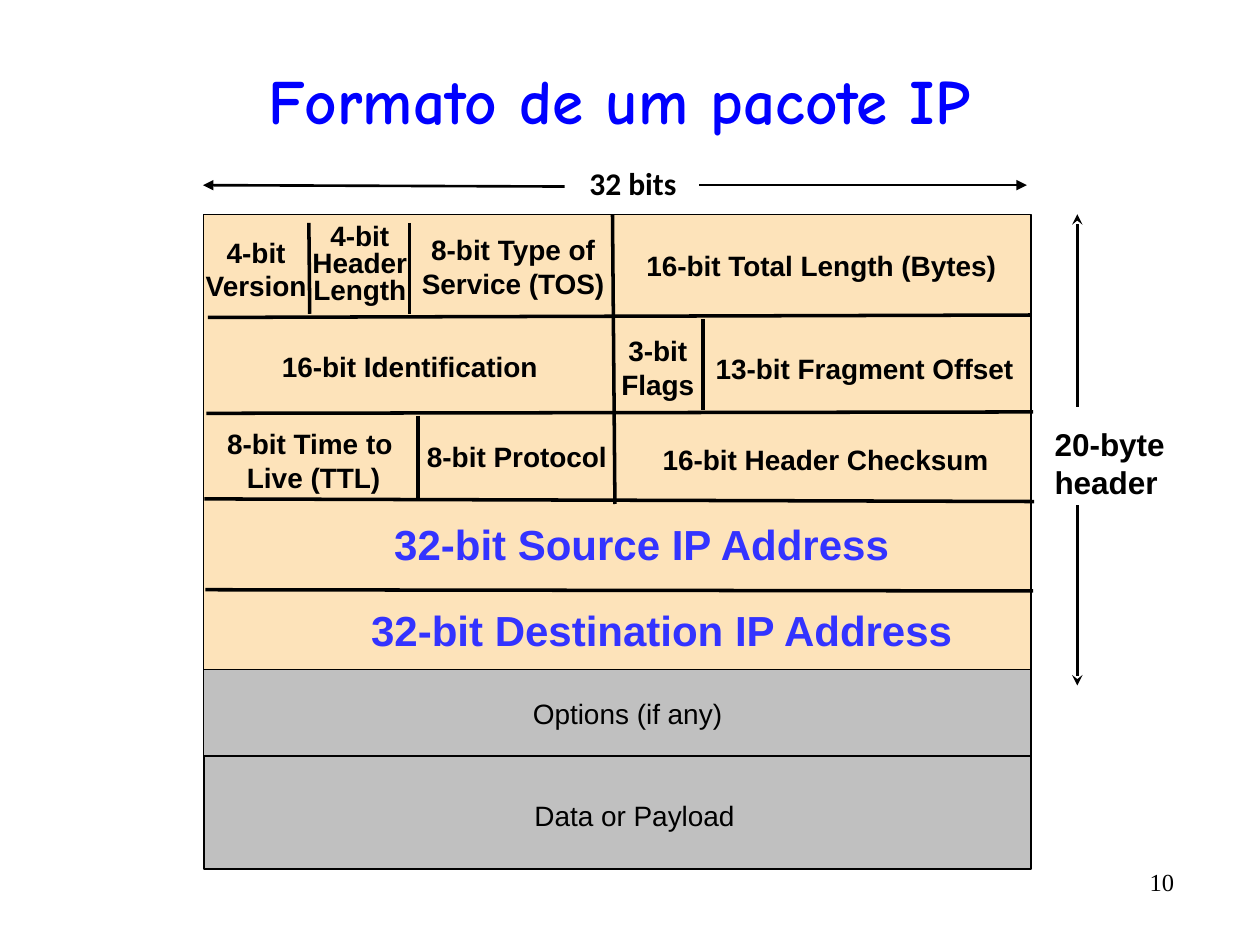
from typing import NamedTuple

from lxml import etree
from pptx import Presentation
from pptx.dml.color import RGBColor
from pptx.enum.shapes import MSO_CONNECTOR, MSO_SHAPE
from pptx.enum.text import MSO_ANCHOR, MSO_AUTO_SIZE, PP_ALIGN
from pptx.oxml.ns import qn
from pptx.util import Pt

STRAIGHT = MSO_CONNECTOR.STRAIGHT
RECTANGLE = MSO_SHAPE.RECTANGLE
MIDDLE = MSO_ANCHOR.MIDDLE
GROW = MSO_AUTO_SIZE.SHAPE_TO_FIT_TEXT
LEFT, CENTER, RIGHT = PP_ALIGN.LEFT, PP_ALIGN.CENTER, PP_ALIGN.RIGHT

COLORS = {
    "title": "0000FF",
    "text": "000000",
    "address": "3333FF",
    "header": "FDE3BA",
    "payload": "C0C0C0",
}


class Band(NamedTuple):
    left: float
    top: float
    width: float
    height: float
    color: str


class Label(NamedTuple):
    text: str
    left: float
    top: float
    width: float
    height: float
    align: PP_ALIGN = LEFT
    size: float = 16
    color: str = "text"
    bold: bool = True
    font: str = "Arial"
    spacing: float = 1.0
    wrap: bool = False


class Line(NamedTuple):
    x1: float
    y1: float
    x2: float
    y2: float
    width: float = 2
    head: str = ""
    tail: str = ""


BANDS = [
    Band(116.3, 122.6, 472.8, 260.2, "header"),
    Band(116.3, 382.6, 472.8, 49.4, "payload"),
    Band(116.6, 432, 472.4, 64.8, "payload"),
]

LINES = [
    # Row dividers
    Line(118.8, 181.4, 589.7, 180),
    Line(118, 236.2, 590.4, 235.4),
    Line(116.8, 285.1, 591, 286.6),
    Line(117.4, 337, 590.4, 337.7),
    # Field dividers
    Line(350, 122.4, 351.4, 288),
    Line(234, 127.4, 234, 179.3),
    Line(176.5, 127.4, 177, 179.3),
    Line(401.8, 182.2, 401.8, 234),
    Line(239, 237.6, 239, 284.4),
    # Header height
    Line(615.6, 122.4, 615.6, 232.6, head="stealth"),
    Line(615.6, 288.7, 615.6, 391.7, tail="stealth"),
    # Packet width
    Line(399.6, 105.8, 586.8, 105.8, 1.5, tail="triangle"),
    Line(322.6, 106.6, 116, 105.8, 1.5, tail="triangle"),
]

LABELS = [
    # First word
    Label("4-bit\nVersion", 110, 131, 72.7, 45.4, CENTER),
    Label("4-bit\nHeader\nLength", 171.4, 125.3, 68.4, 53.3, CENTER, spacing=0.8),
    Label("8-bit Type of\nService (TOS)", 233.5, 129.6, 119.5, 45.4, CENTER),
    Label("16-bit Total Length (Bytes)", 362.2, 138.7, 216.7, 26.6),
    # Second word
    Label("16-bit Identification", 154, 196, 161.3, 26),
    Label("3-bit\nFlags", 347.8, 187.2, 56.2, 45.4, CENTER),
    Label("13-bit Fragment Offset", 401.8, 197.3, 185, 26),
    # Third word
    Label("8-bit Time to \nLive (TTL)", 122, 240.2, 114.5, 45.4, CENTER),
    Label("8-bit Protocol", 236.9, 247.7, 118.8, 26.6),
    Label("16-bit Header Checksum", 371.5, 249.1, 200.9, 26),
    # Addresses
    Label("32-bit Source IP Address", 218.2, 292.5, 300.2, 36, size=24, color="address"),
    Label("32-bit Destination IP Address", 205, 342, 350, 36, size=24, color="address"),
    # After the header
    Label("Options (if any)", 297.4, 394.6, 123, 26, bold=False),
    Label("Data or Payload", 298.3, 452.9, 130.3, 26.6, bold=False),
    # Dimensions, with room for the longest word
    Label("20-byte\nheader", 595.5, 239.3, 82, 50.4, size=18),
    Label("32 bits", 329.3, 90, 64.8, 28.8, CENTER, 18, font="Calibri"),
    # Slide number
    Label("10", 606, 491.8, 72, 30.2, RIGHT, 14, bold=False,
          font="Times New Roman", wrap=True),
]


def rgb(name: str) -> RGBColor:
    return RGBColor.from_string(COLORS[name])


def format_text(frame, label: Label) -> None:
    frame.text = label.text
    for paragraph in frame.paragraphs:
        paragraph.alignment = label.align
        if label.spacing != 1:
            paragraph.line_spacing = label.spacing
        for run in paragraph.runs:
            run.font.name = label.font
            run.font.size = Pt(label.size)
            run.font.bold = label.bold
            run.font.color.rgb = rgb(label.color)


def place(label: Label):
    return Pt(label.left), Pt(label.top), Pt(label.width), Pt(label.height)


def add_title(slide, label: Label) -> None:
    title = slide.shapes.title
    title.left, title.top, title.width, title.height = place(label)
    title.text_frame.vertical_anchor = MIDDLE
    format_text(title.text_frame, label)


def add_band(slide, band: Band) -> None:
    shape = slide.shapes.add_shape(
        RECTANGLE, Pt(band.left), Pt(band.top), Pt(band.width), Pt(band.height))
    shape.shadow.inherit = False
    shape.fill.solid()
    shape.fill.fore_color.rgb = rgb(band.color)
    shape.line.color.rgb = rgb("text")
    shape.line.width = Pt(1)


def add_line(slide, line: Line) -> None:
    connector = slide.shapes.add_connector(
        STRAIGHT, Pt(line.x1), Pt(line.y1), Pt(line.x2), Pt(line.y2))
    connector.line.color.rgb = rgb("text")
    connector.line.width = Pt(line.width)
    outline = connector.line._get_or_add_ln()
    for tag, kind in (("a:headEnd", line.head), ("a:tailEnd", line.tail)):
        if kind:
            etree.SubElement(outline, qn(tag), type=kind)
    etree.SubElement(connector._element.spPr, qn("a:effectLst"))


def add_label(slide, label: Label) -> None:
    frame = slide.shapes.add_textbox(*place(label)).text_frame
    frame.word_wrap = label.wrap
    if not label.wrap:
        frame.auto_size = GROW
    format_text(frame, label)


def main() -> None:
    presentation = Presentation()
    presentation.slide_width, presentation.slide_height = Pt(720), Pt(540)
    slide = presentation.slides.add_slide(presentation.slide_layouts[5])

    add_title(slide, Label("Formato de um pacote IP", 23.8, 30, 660.2, 54,
                           CENTER, 36, "title", font="Comic Neue"))
    for band in BANDS:
        add_band(slide, band)
    for line in LINES:
        add_line(slide, line)
    for label in LABELS:
        add_label(slide, label)

    presentation.save("out.pptx")


if __name__ == "__main__":
    main()
